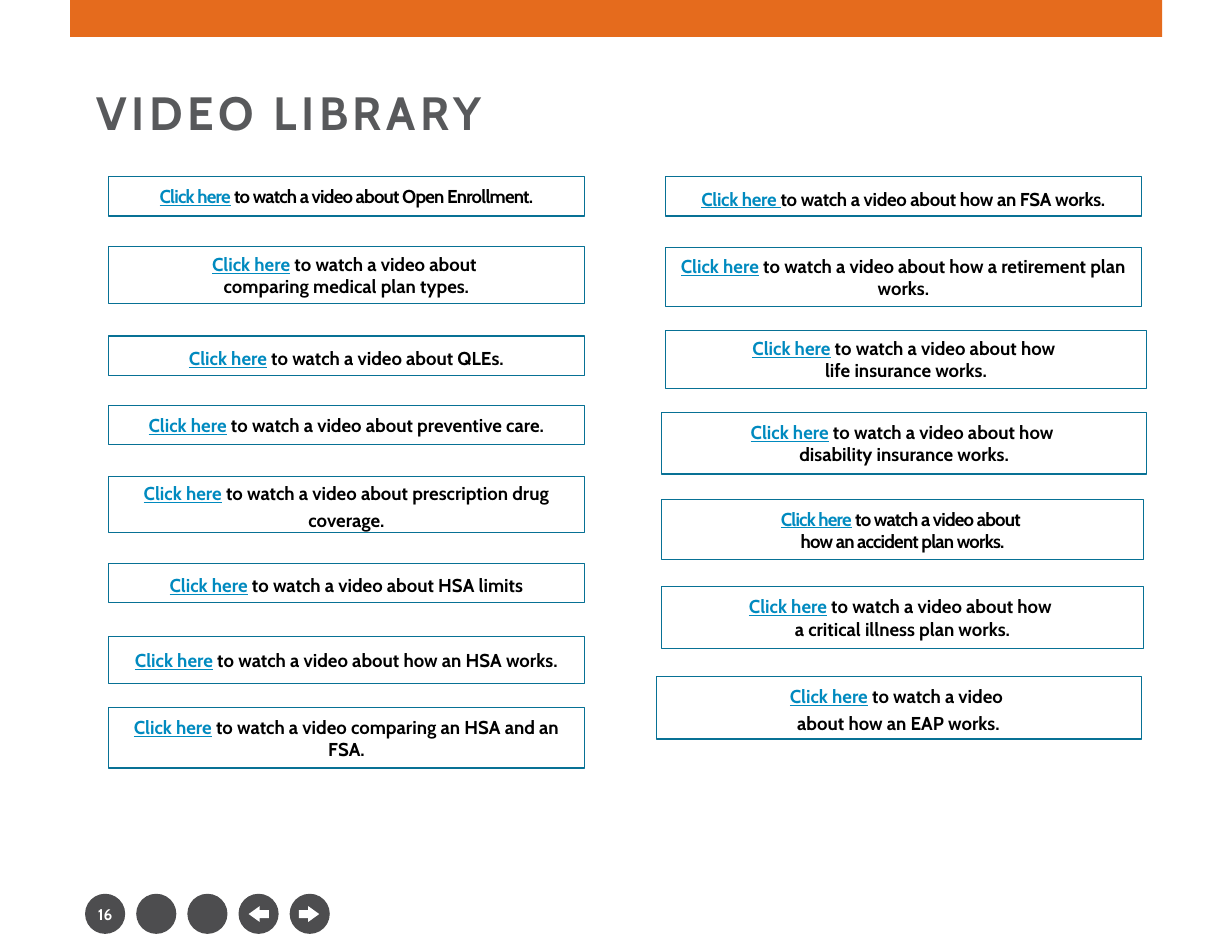
import pptx
import pptx.dml.color
import pptx.enum.shapes
import pptx.enum.text
import pptx.util

Cm = pptx.util.Cm
Pt = pptx.util.Pt
KIND = pptx.enum.shapes.MSO_SHAPE
ALIGN = pptx.enum.text.PP_ALIGN
MIDDLE = pptx.enum.text.MSO_ANCHOR.MIDDLE


def color(code):
    return pptx.dml.color.RGBColor.from_string(code)


def apply(target, values):
    for name, value in values.items():
        setattr(target, name, value)


class Page:
    face = "Cabin"
    orange, dark, gray = "E56B1D", "4D4D4F", "58595B"
    teal, blue, black, white = "087195", "008ABF", "000000", "FFFFFF"

    def __init__(self, deck):
        self.slide = deck.slides.add_slide(deck.slide_layouts[6])

    def paint(self, shape, fill=None, line=None):
        shape.shadow.inherit = False
        if fill:
            shape.fill.solid()
            shape.fill.fore_color.rgb = color(fill)
        else:
            shape.fill.background()
        if line:
            shape.line.color.rgb = color(line)
            shape.line.width = Pt(0.75)
        else:
            shape.line.fill.background()

    def shape(self, kind, x, y, w, h, fill=None, line=None):
        shape = self.slide.shapes.add_shape(kind, Cm(x), Cm(y), Cm(w), Cm(h))
        self.paint(shape, fill, line)
        return shape

    def frame(self, shape, side=0.25):
        frame = shape.text_frame
        apply(frame, {
            "word_wrap": True, "vertical_anchor": MIDDLE,
            "margin_left": Cm(side), "margin_right": Cm(side),
            "margin_top": Cm(0.13), "margin_bottom": Cm(0.13),
        })
        return frame

    def run(self, para, text, size, ink, under=False, space=0):
        run = para.add_run()
        run.text = text
        apply(run.font, {
            "name": self.face, "size": Pt(size), "bold": True, "underline": under,
        })
        run.font.color.rgb = color(ink)
        if space:
            run._r.get_or_add_rPr().set("spc", str(round(space * 100)))

    def title(self, text, x, y, w, h):
        box = self.slide.shapes.add_textbox(Cm(x), Cm(y), Cm(w), Cm(h))
        para = self.frame(box).paragraphs[0]
        para.line_spacing = 0.9
        self.run(para, text, 30, self.gray, space=3)

    def card(self, x, y, w, h, text, lead=1, space=0, side=0.25, link="Click here"):
        frame = self.frame(self.shape(KIND.RECTANGLE, x, y, w, h, line=self.teal), side)
        for i, block in enumerate(text.split("|")):
            para = frame.add_paragraph() if i else frame.paragraphs[0]
            apply(para, {"alignment": ALIGN.CENTER, "line_spacing": lead})
            if i == 0:
                self.run(para, link, 12, self.blue, True, space)
                if not link.endswith(" "):
                    block = " " + block
            for j, line in enumerate(block.split("\n")):
                if j:
                    para.add_line_break()
                self.run(para, line, 12, self.black, space=space)

    def button(self, x, y, text=""):
        disc = self.shape(KIND.OVAL, x, y, 0.91, 0.91, self.dark)
        if text:
            para = self.frame(disc, 0).paragraphs[0]
            para.alignment = ALIGN.CENTER
            self.run(para, text, 10, self.white)

    def arrow(self, x, y, flip=False):
        spots = [(0.25, 0), (0.25, 0.09), (0.46, 0.09), (0.46, 0.27),
                 (0.25, 0.27), (0.25, 0.36), (0, 0.18)]
        spots = [(Cm(x + (0.46 - a if flip else a)), Cm(y + b)) for a, b in spots]
        pen = self.slide.shapes.build_freeform(*spots[0])
        pen.add_line_segments(spots[1:], close=True)
        self.paint(pen.convert_to_shape(), self.white)


LEFT = [
    (4.01, 0.89, "to watch a video about Open Enrollment.", {"space": -0.5}),
    (5.59, 1.3, "to watch a video about \ncomparing medical plan types.", {}),
    (7.62, 0.89, "to watch a video about QLEs.", {"lead": 1.2}),
    (9.19, 0.89, "to watch a video about preventive care.", {}),
    (10.8, 1.27, "to watch a video about prescription drug coverage.", {"lead": 1.2}),
    (12.78, 0.89, "to watch a video about HSA limits", {"lead": 1.2}),
    (14.43, 1.07, "to watch a video about how an HSA works.", {}),
    (16.05, 1.37, "to watch a video comparing an HSA and an FSA.", {}),
]
RIGHT = [
    (15.09, 4.01, 10.8, 0.89, "to watch a video about how an FSA works.",
     {"lead": 1.2, "space": -0.2, "link": "Click here "}),
    (15.09, 5.61, 10.8, 1.35, "to watch a video about how a retirement plan works.",
     {"side": 0.13}),
    (15.09, 7.49, 10.92, 1.32, "to watch a video about how \nlife insurance works.", {}),
    (15.01, 9.35, 11, 1.4, "to watch a video about how \ndisability insurance works.", {}),
    (15.01, 11.33, 10.92, 1.37, "to watch a video about |how an accident plan works.",
     {"space": -0.5}),
    (15.01, 13.31, 10.92, 1.4, "to watch a video about how \na critical illness plan works.", {}),
    (14.88, 15.34, 11, 1.42, "to watch a video |about how an EAP works.", {"lead": 1.2}),
]


def main():
    deck = pptx.Presentation()
    apply(deck, {"slide_width": Cm(27.94), "slide_height": Cm(21.59)})
    page = Page(deck)
    for i in range(5):
        page.button(1.93 + 1.16 * i, 20.27, "" if i else "16")
    page.arrow(5.64, 20.55)
    page.arrow(6.78, 20.55, True)
    page.shape(KIND.RECTANGLE, 1.59, 0, 24.77, 0.84, page.orange)
    page.title("VIDEO LIBRARY", 1.93, 1.14, 24.43, 2.95)
    for y, h, text, style in LEFT:
        page.card(2.46, y, 10.8, h, text, **style)
    for x, y, w, h, text, style in RIGHT:
        page.card(x, y, w, h, text, **style)
    deck.save("out.pptx")


if __name__ == "__main__":
    main()
